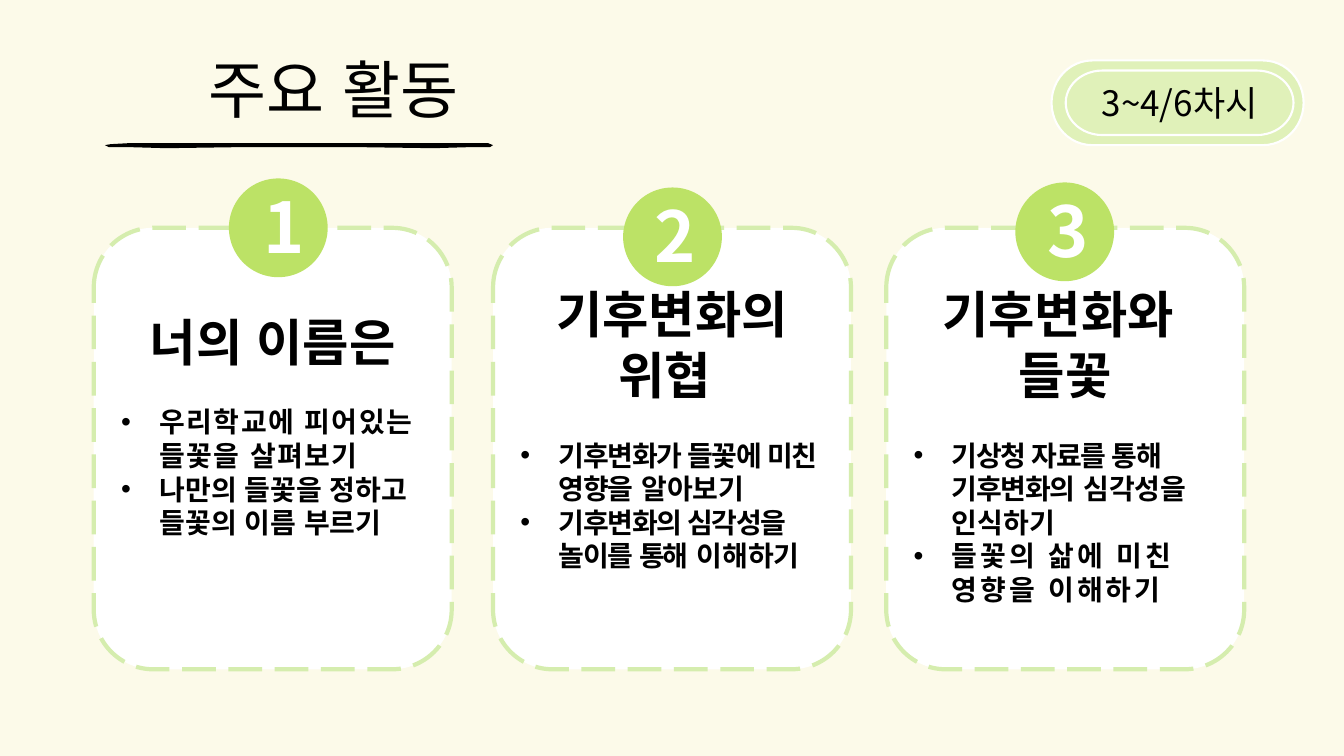
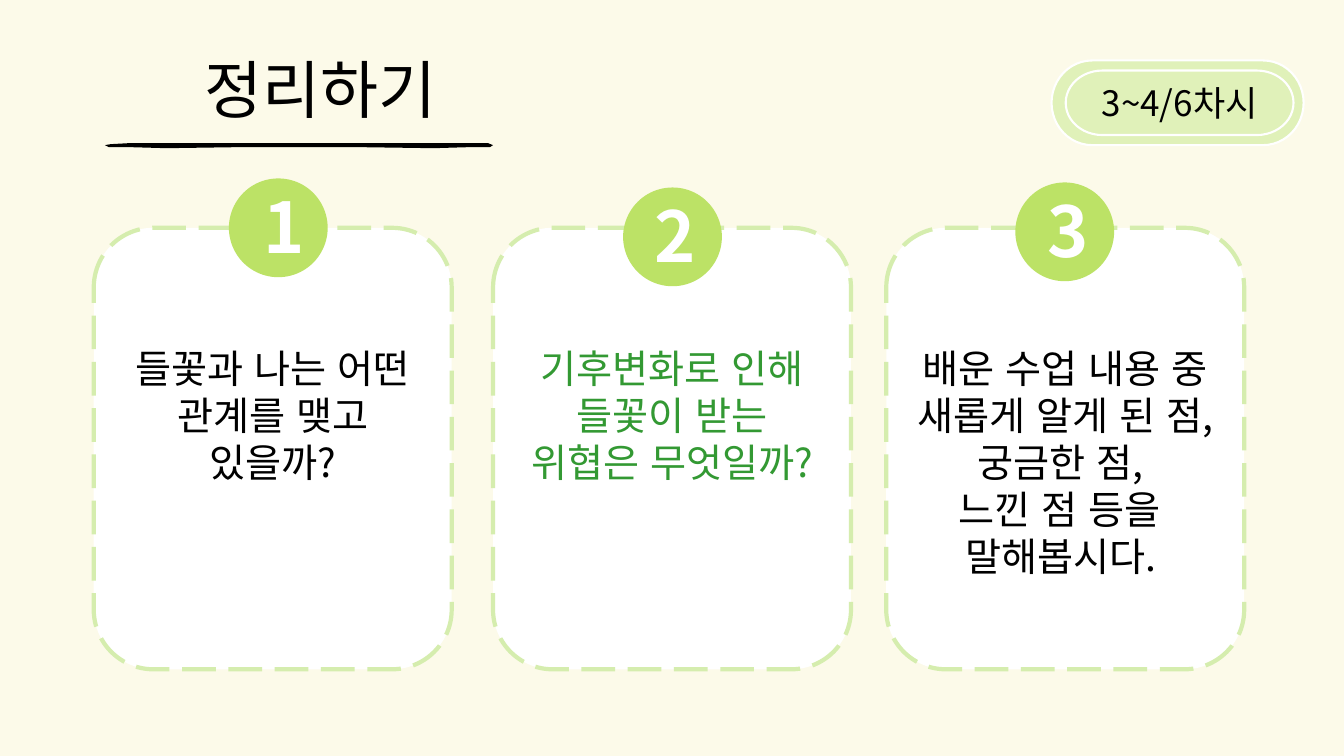
from lxml import etree
from pptx import Presentation
from pptx.dml.color import RGBColor
from pptx.enum import dml, lang, shapes, text
from pptx.oxml.ns import qn
from pptx.util import Inches, Pt

FONT = "Noto Sans CJK KR"
COLORS = {
    "cream": "FCFAE9",
    "black": "000000",
    "white": "FFFFFF",
    "dash": "D5EDAE",
    "circle": "BCE266",
    "badge": "E0F1B9",
    "green": "339933",
}
CARD_TOP, CARD_WIDTH, CARD_HEIGHT = 2.26, 3.55, 4.38
CARD_LEFTS = [0.93, 4.89, 8.79]
CIRCLES = [(2.27, 1.77, 2.52), (6.18, 1.86, 6.39), (10.07, 1.81, 10.29)]
CIRCLE_SIZE = 0.98
BADGE_FRAMES = [(10.43, 0.6, 2.5, 0.84), (10.57, 0.7, 2.26, 0.64)]
STROKE = [
    (1.1, 1.43), (1.28, 1.42), (4.66, 1.42), (4.84, 1.42), (4.89, 1.44),
    (4.86, 1.46), (4.65, 1.46), (4.3, 1.47), (3.57, 1.46), (2.36, 1.46),
    (1.65, 1.47), (1.29, 1.46), (1.08, 1.46), (1.04, 1.44),
]

SLIDES = [
    {
        "title": "주요 활동", "title_left": 0.93, "size": 36, "bold": True,
        "cards": [
            {"inset": 0.65, "color": "black", "lines": ["너의 이름은"], "bullets": [
                [("우리학교에 피어있는 들꽃을 살펴보기", 1)],
                [("나만의 들꽃을 정하고 들꽃의 이름 부르기", 0)],
            ]},
            {"inset": 0.38, "color": "black", "lines": ["기후변화의", "위협 "], "bullets": [
                [("기후변화가 들꽃에 미친 영향을", -1), (" 알아보기", 0)],
                [("기후변화의 심각성을 놀이를 ", -1), ("통해", -2), (" 이해하기", 0)],
            ]},
            {"inset": 0.38, "color": "black", "lines": ["기후변화와 ", "들꽃"], "bullets": [
                [("기상청 자료를 통해 기후변화의", -1), (" 심각성을 인식하기", 0)],
                [("들꽃의 삶에 미친 영향을 이해하기", 2)],
            ]},
        ],
    },
    {
        "title": "정리하기", "title_left": 0.8, "size": 28, "bold": False,
        "cards": [
            {"inset": 0.98, "color": "black", "bullets": [],
             "lines": ["들꽃과 나는 어떤 관계를 맺고 있을까?"]},
            {"inset": 0.98, "color": "green", "bullets": [],
             "lines": ["기후변화로 인해 들꽃이 받는 위협은 무엇일까?"]},
            {"inset": 0.98, "color": "black", "bullets": [],
             "lines": ["배운 수업 내용 중", "새롭게 알게 된 점,", "궁금한 점, ",
                       "느낀 점 등을 ", "말해봅시다. "]},
        ],
    },
]


def write(paragraph, content, size, color="black", bold=False, spacing=0,
          align=text.PP_ALIGN.CENTER):
    paragraph.alignment = align
    paragraph.line_spacing = Pt(size * 1.2)
    run = paragraph.add_run()
    run.text = content
    run.font.size = Pt(size)
    run.font.bold = bold
    run.font.name = FONT
    run.font.language_id = lang.MSO_LANGUAGE_ID.KOREAN
    run.font.color.rgb = RGBColor.from_string(COLORS[color])
    properties = run.font._element
    properties.set("spc", str(spacing * 100))
    etree.SubElement(properties, qn("a:ea")).set("typeface", FONT)


def paint(shape, fill, line=None, width=0):
    shape.shadow.inherit = False
    shape.fill.solid()
    shape.fill.fore_color.rgb = RGBColor.from_string(COLORS[fill])
    if line:
        shape.line.color.rgb = RGBColor.from_string(COLORS[line])
        shape.line.width = Pt(width)
    else:
        shape.line.fill.background()


presentation = Presentation()
presentation.slide_width = Inches(13.33)
presentation.slide_height = Inches(7.5)
background = presentation.slide_master.background.fill
background.solid()
background.fore_color.rgb = RGBColor.from_string(COLORS["cream"])

for page in SLIDES:
    slide = presentation.slides.add_slide(presentation.slide_layouts[6])

    title = slide.shapes.add_textbox(
        Inches(page["title_left"]), Inches(0.53), Inches(4.75), Inches(0.7))
    title.text_frame.word_wrap = True
    title.text_frame.vertical_anchor = text.MSO_ANCHOR.MIDDLE
    write(title.text_frame.paragraphs[0], page["title"], 45)

    points = [(Inches(x), Inches(y)) for x, y in STROKE]
    builder = slide.shapes.build_freeform(*points[0])
    builder.add_line_segments(points[1:], close=True)
    paint(builder.convert_to_shape(), "black")

    for left, card in zip(CARD_LEFTS, page["cards"]):
        shape = slide.shapes.add_shape(
            shapes.MSO_SHAPE.FLOWCHART_ALTERNATE_PROCESS,
            Inches(left), Inches(CARD_TOP), Inches(CARD_WIDTH), Inches(CARD_HEIGHT))
        paint(shape, "white", "dash", 3)
        shape.line.dash_style = dml.MSO_LINE.LONG_DASH
        frame = shape.text_frame
        frame.word_wrap = True
        frame.vertical_anchor = text.MSO_ANCHOR.TOP
        frame.margin_top = Inches(card["inset"])
        for index, line in enumerate(card["lines"]):
            paragraph = frame.add_paragraph() if index else frame.paragraphs[0]
            write(paragraph, line, page["size"], card["color"], page["bold"])
        for index, runs in enumerate(card["bullets"]):
            paragraph = frame.add_paragraph()
            for content, spacing in runs:
                write(paragraph, content, 20, bold=True, spacing=spacing,
                      align=text.PP_ALIGN.LEFT)
            paragraph.space_before = Pt(0 if index else 24)
            properties = paragraph._p.get_or_add_pPr()
            properties.set("marL", str(Inches(0.38)))
            properties.set("indent", str(-Inches(0.38)))
            etree.SubElement(properties, qn("a:buFont")).set("typeface", "Arial")
            etree.SubElement(properties, qn("a:buChar")).set("char", "•")

    for number, (left, top, digit_left) in enumerate(CIRCLES, 1):
        marker = slide.shapes.add_group_shape()
        circle = marker.shapes.add_shape(
            shapes.MSO_SHAPE.OVAL, Inches(left), Inches(top),
            Inches(CIRCLE_SIZE), Inches(CIRCLE_SIZE))
        paint(circle, "circle")
        digit = marker.shapes.add_textbox(
            Inches(digit_left), Inches(top), Inches(0.6), Inches(0.93))
        digit.text_frame.word_wrap = False
        write(digit.text_frame.paragraphs[0], str(number), 50, "white", True,
              align=text.PP_ALIGN.LEFT)

    badge = slide.shapes.add_group_shape()
    for frame in BADGE_FRAMES:
        pill = badge.shapes.add_shape(
            shapes.MSO_SHAPE.FLOWCHART_TERMINATOR, *map(Inches, frame))
        paint(pill, "badge", "white", 1.5)
    pill.text_frame.vertical_anchor = text.MSO_ANCHOR.MIDDLE
    write(pill.text_frame.paragraphs[0], "3~4/6차시", 25)

presentation.save("out.pptx")
